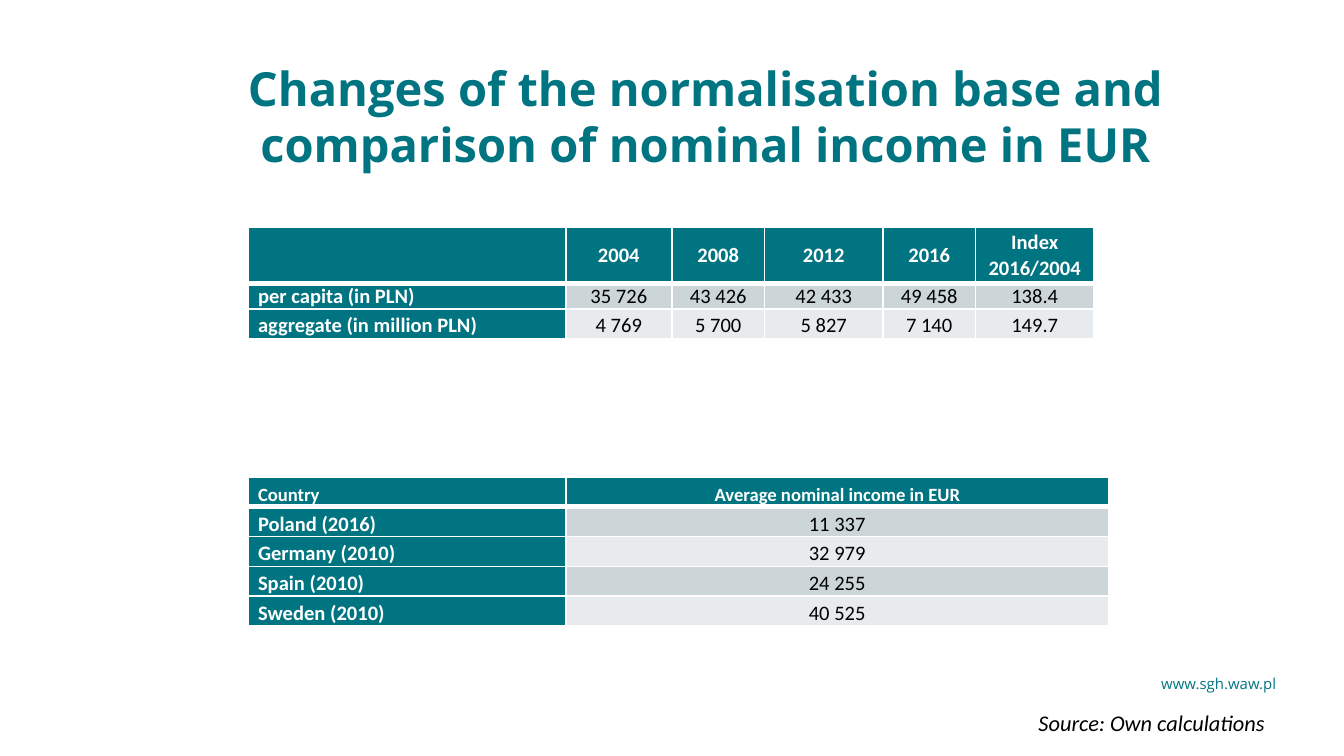
from lxml.etree import SubElement
from pptx import Presentation
from pptx.dml.color import RGBColor
from pptx.enum.text import MSO_ANCHOR as Anchor, MSO_AUTO_SIZE as AutoSize, PP_ALIGN as Align
from pptx.oxml.ns import qn
from pptx.util import Inches, Pt

COLORS = {
    "teal": "007481",
    "white": "FFFFFF",
    "black": "000000",
    "odd": "CCD6D8",
    "even": "E7EBED",
}
INCOME_ROWS = [
    ["", "2004", "2008", "2012", "2016", "Index 2016/2004"],
    ["per capita (in PLN)", "35 726", "43 426", "42 433", "49 458", "138.4"],
    ["aggregate (in million PLN)", "4 769", "5 700", "5 827", "7 140", "149.7"],
]
COUNTRY_ROWS = [
    ["Country", "Average nominal income in EUR"],
    ["Poland (2016)", "11 337"],
    ["Germany (2010)", "32 979"],
    ["Spain (2010)", "24 255"],
    ["Sweden (2010)", "40 525"],
]


def color(name):
    """Return the named palette colour."""
    return RGBColor.from_string(COLORS[name])


def add_span(para, text, size, font, tint, bold=False, italic=False):
    """Add one formatted run to a paragraph."""
    span = para.add_run()
    span.text = text
    span.font.size = Pt(size)
    span.font.name = font
    span.font.bold = bold
    span.font.italic = italic
    span.font.color.rgb = color(tint)


def set_borders(cell, top, bottom):
    """Give a cell white borders, with top and bottom widths in points."""
    properties = cell._tc.get_or_add_tcPr()
    for side, width in (("L", 1), ("R", 1), ("T", top), ("B", bottom)):
        line = SubElement(properties, qn(f"a:ln{side}"), w=str(Pt(width)))
        fill = SubElement(line, qn("a:solidFill"))
        SubElement(fill, qn("a:srgbClr"), val=COLORS["white"])


def fill_cell(cell, text, row, column, header_size, header_anchor):
    """Format a cell by its place in the table and write its text."""
    heading = row == 0 or column == 0
    set_borders(cell, top=3 if row == 1 else 1, bottom=3 if row == 0 else 1)
    cell.fill.solid()
    cell.fill.fore_color.rgb = color("teal" if heading else "odd" if row % 2 else "even")
    cell.margin_left = cell.margin_right = Inches(0.07)
    cell.margin_top = cell.margin_bottom = 0
    cell.vertical_anchor = Anchor.BOTTOM if row else header_anchor
    para = cell.text_frame.paragraphs[0]
    para.alignment = Align.CENTER if column else Align.LEFT
    if text:
        add_span(para, text, 11 if row else header_size, "Calibri",
                 "white" if heading else "black", bold=heading)


def add_data_table(page, left, top, widths, heights, rows, header_size, header_anchor):
    """Add a table with a teal header row and first column."""
    frame = page.shapes.add_table(len(rows), len(widths), Inches(left), Inches(top),
                                  Inches(sum(widths)), Inches(sum(heights)))
    table = frame.table
    for column, width in zip(table.columns, widths):
        column.width = Inches(width)
    for row, height in zip(table.rows, heights):
        row.height = Inches(height)
    for row, texts in enumerate(rows):
        for column, text in enumerate(texts):
            fill_cell(table.cell(row, column), text, row, column, header_size, header_anchor)


def place_title(page, left, top, width, height):
    """Place and format the title placeholder."""
    title = page.shapes.title
    title.left, title.top = Inches(left), Inches(top)
    title.width, title.height = Inches(width), Inches(height)
    frame = title.text_frame
    frame.auto_size = AutoSize.NONE
    frame.word_wrap = True
    frame.vertical_anchor = Anchor.TOP
    frame.margin_left = frame.margin_right = frame.margin_bottom = 0
    frame.margin_top = Inches(0.02)
    para = frame.paragraphs[0]
    para.alignment = Align.CENTER
    para.line_spacing = 1.0
    add_span(para, "Changes of the normalisation base and comparison of nominal income in EUR",
             25.2, "Open Sans", "teal", bold=True)


def add_web_address(page, left, top, width, height):
    """Add the web address at the lower right."""
    box = page.shapes.add_textbox(Inches(left), Inches(top), Inches(width), Inches(height))
    frame = box.text_frame
    frame.word_wrap = False
    frame.margin_left = frame.margin_right = frame.margin_top = frame.margin_bottom = 0
    add_span(frame.paragraphs[0], "www.sgh.waw.pl", 8, "Open Sans", "teal")


def add_source_note(page, left, top, width, height):
    """Add the right-aligned source note."""
    box = page.shapes.add_textbox(Inches(left), Inches(top), Inches(width), Inches(height))
    frame = box.text_frame
    frame.word_wrap = True
    para = frame.paragraphs[0]
    para.alignment = Align.RIGHT
    add_span(para, "Source: Own calculations", 12, "Calibri", "black", italic=True)


def main():
    """Build and save the deck."""
    deck = Presentation()
    deck.slide_width, deck.slide_height = Inches(10), Inches(10 * 9 / 16)
    page = deck.slides.add_slide(deck.slide_layouts[5])
    add_web_address(page, 8.64, 5.02, 0.87, 0.13)
    place_title(page, 1, 0.42, 8.5, 0.74)
    add_data_table(page, 1.85, 1.69, [2.36, 0.79, 0.69, 0.88, 0.69, 0.88],
                   [0.42, 0.19, 0.22], INCOME_ROWS, 11, Anchor.MIDDLE)
    add_data_table(page, 1.85, 3.55, [2.36, 4.04], [1.11 / len(COUNTRY_ROWS)] * len(COUNTRY_ROWS),
                   COUNTRY_ROWS, 10, Anchor.BOTTOM)
    add_source_note(page, 3.77, 5.23, 5.74, 0.3)
    deck.save("out.pptx")


if __name__ == "__main__":
    main()
